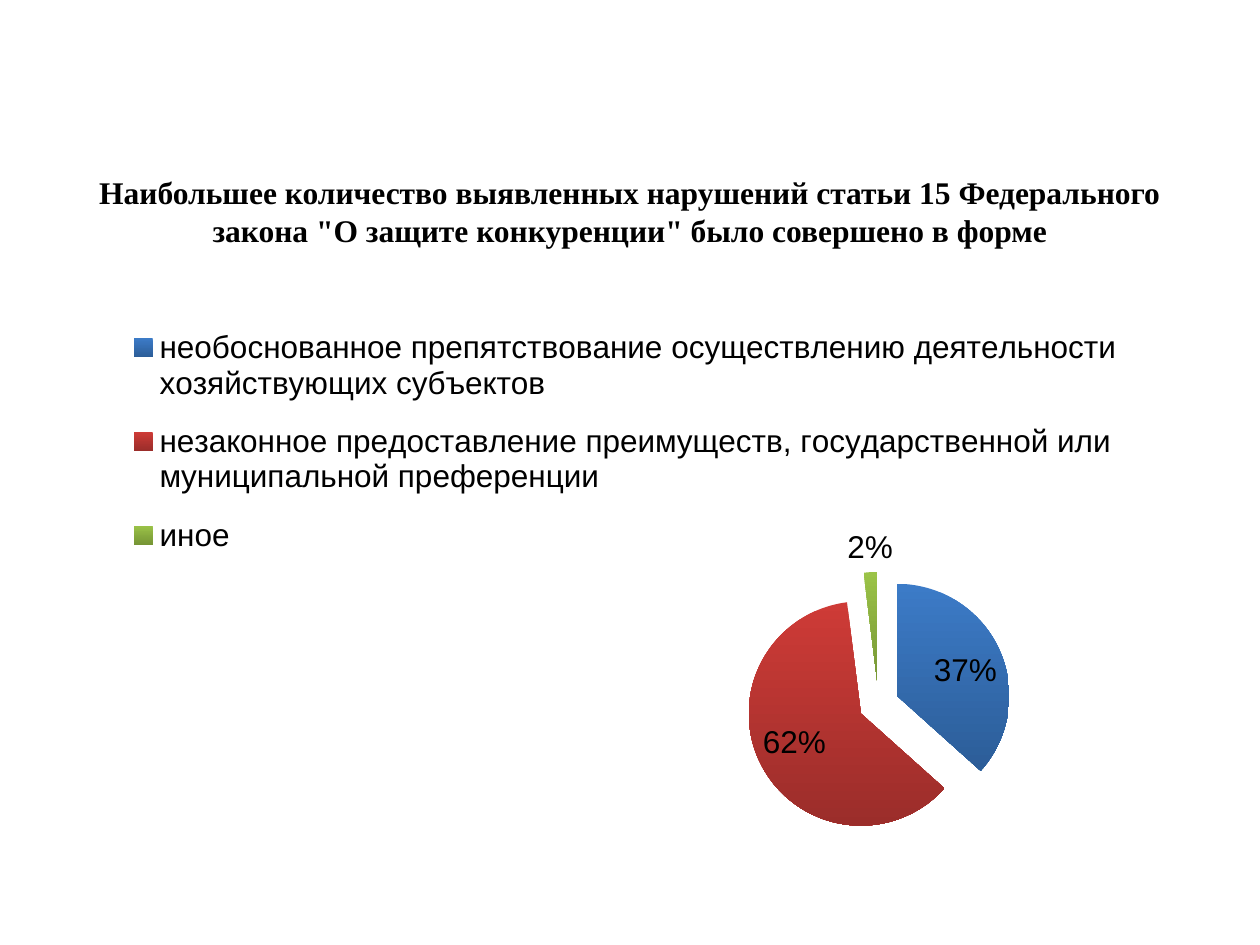
from lxml import etree
from pptx import Presentation
from pptx import util as u
from pptx.chart.data import CategoryChartData
from pptx.dml.color import RGBColor
from pptx.enum import chart as charts, text
from pptx.oxml import parse_xml
from pptx.oxml.ns import nsdecls, qn


def color(value):
    return RGBColor.from_string(value)


def manual_layout(x, y, width, height, inner=False):
    values = dict(xMode="edge", yMode="edge", x=x, y=y, w=width, h=height)
    layout = parse_xml(f"<c:layout {nsdecls('c')}><c:manualLayout/></c:layout>")
    if inner:
        etree.SubElement(layout[0], qn("c:layoutTarget")).set("val", "inner")
    for tag, value in values.items():
        etree.SubElement(layout[0], qn(f"c:{tag}")).set("val", str(value))
    return layout


presentation = Presentation()
presentation.slide_width = u.Inches(10)
presentation.slide_height = u.Inches(7.5)
slide = presentation.slides.add_slide(presentation.slide_layouts[5])

# Title
title = slide.shapes.title
title.left, title.top = u.Inches(0.5), u.Inches(1.05)
title.width, title.height = u.Inches(9), u.Inches(1.25)
frame = title.text_frame
frame.text = ('Наибольшее количество выявленных нарушений статьи 15 Федерального '
              'закона "О защите конкуренции" было совершено в форме')
frame.word_wrap = True
frame.auto_size = text.MSO_AUTO_SIZE.NONE
frame.vertical_anchor = text.MSO_ANCHOR.MIDDLE
frame.margin_left = frame.margin_right = frame.margin_top = frame.margin_bottom = 0
paragraph = frame.paragraphs[0]
paragraph.alignment = text.PP_ALIGN.CENTER
paragraph.font.name = "Times New Roman"
paragraph.font.size = u.Pt(18)
paragraph.font.bold = True
paragraph.font.color.rgb = color("000000")

# Pie chart: category, percent, gradient from top to bottom
violations = [
    ("необоснованное препятствование осуществлению деятельности хозяйствующих субъектов",
     37, "3C7BC7", "2C5D98"),
    ("незаконное предоставление преимуществ, государственной или муниципальной преференции",
     62, "CE3B37", "9B2D2A"),
    ("иное", 2, "9BC348", "769535"),
]
data = CategoryChartData()
data.categories = [violation[0] for violation in violations]
data.add_series("Series 1", [violation[1] for violation in violations])
chart = slide.shapes.add_chart(
    charts.XL_CHART_TYPE.PIE, u.Inches(0.5), u.Inches(2.26),
    u.Inches(8.75), u.Inches(4.44), data).chart
chart.has_title = False
chart.font.name = "Arial"
chart.font.size = u.Pt(18)
chart.font.color.rgb = color("000000")

plot = chart.plots[0]
plot.vary_by_categories = True
series = plot.series[0]
for index, (_, _, top, bottom) in enumerate(violations):
    fill = series.points[index].format.fill
    fill.gradient()
    fill.gradient_angle = 270
    for stop, value in zip(fill.gradient_stops, (top, bottom)):
        stop.color.rgb = color(value)

# Slices pulled apart
explosion = parse_xml(f'<c:explosion {nsdecls("c")} val="18"/>')
series._element.find(qn("c:dPt")).addprevious(explosion)

# Data labels
plot.has_data_labels = True
labels = plot.data_labels
labels.show_value = True
labels.number_format = '0"%"'
labels.number_format_is_linked = False
labels.position = charts.XL_LABEL_POSITION.BEST_FIT

# Legend above the pie
chart.has_legend = True
legend = chart.legend
legend.position = charts.XL_LEGEND_POSITION.TOP
legend.include_in_layout = False
legend._element.find(qn("c:legendPos")).addnext(manual_layout(0.05, 0.04, 0.92, 0.48))

# Pie in the lower right
plot_area = chart._chartSpace.chart.plotArea
for layout in plot_area.findall(qn("c:layout")):
    plot_area.remove(layout)
plot_area.insert(0, manual_layout(0.62, 0.51, 0.24, 0.48, inner=True))

presentation.save("out.pptx")
